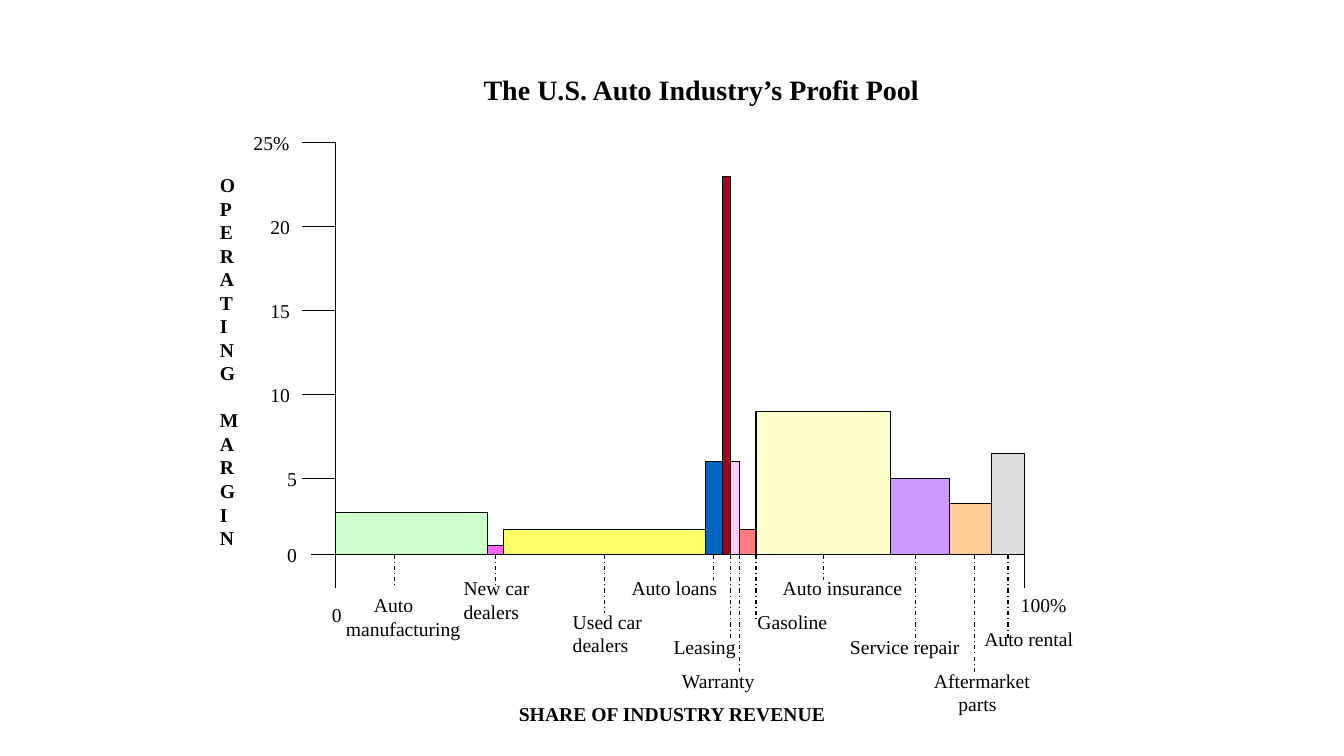
from lxml.etree import SubElement
from pptx import Presentation
from pptx.dml.color import RGBColor
from pptx.enum.dml import MSO_LINE
from pptx.enum.shapes import MSO_CONNECTOR, MSO_SHAPE
from pptx.enum.text import PP_ALIGN
from pptx.oxml.ns import qn
from pptx.util import Pt

TITLE = "The U.S. Auto Industry’s Profit Pool"
SHARE_TITLE = "SHARE OF INDUSTRY REVENUE"
MARGIN_WORDS = ["OPERATING", "MARGIN"]

# Operating margin in percent, label, label left, label width
TICKS = [
    (5, "5", 198, 22),
    (10, "10", 186, 29),
    (15, "15", 186, 29),
    (20, "20", 186, 29),
    (25, "25%", 174, 41),
]

# Revenue share in grid units, operating margin in percent, fill
SEGMENTS = [
    (18, 3, "CCFFCC"),
    (2, 1, "FF66FF"),
    (24, 2, "FFFF66"),
    (2, 6, "0563C1"),
    (1, 23, "A50021"),
    (1, 6, "FFCCFF"),
    (2, 2, "FF7C80"),
    (16, 9, "FFFFCC"),
    (7, 5, "CC99FF"),
    (5, 3.5, "FFCC99"),
    (4, 6.5, "DDDDDD"),
]

# Lines, their indents, label left, top, width, wrap, leader x, leader bottom
LABELS = [
    (["Auto", "manufacturing"], [20, 0], 240, 420, 102, True, 282, 420),
    (["New car", "dealers"], [0, 0], 324, 408, 62, False, 354, 420),
    (["Used car", "dealers"], [0, 0], 402, 432, 65, False, 432, 438),
    (["Auto loans"], [0], 444, 408, 76, False, 510, 414),
    (["Leasing"], [0], 474, 450, 60, False, 522, 456),
    (["Warranty"], [0], 480, 474, 68, False, 528, 480),
    (["Gasoline"], [0], 534, 432, 66, False, 540, 444),
    (["Auto insurance"], [0], 552, 408, 101, False, 588, 414),
    (["Service repair"], [0], 600, 450, 96, True, 654, 462),
    (["Aftermarket", "parts"], [0, 17.5], 660, 474, 84, False, 696, 480),
    (["Auto rental"], [0], 696, 444, 79, False, 720, 456),
]

FONT = "Times New Roman"
INK = "000000"
GRID = 6
AXIS_X, BASE_Y, AXIS_END_Y = 240, 396, 420
ZERO_Y, POINTS_PER_PERCENT = 402, 12
LABEL_RISE = 12
AXIS_RIGHT = AXIS_X + GRID * sum(share for share, _, _ in SEGMENTS)


def color(hex_code):
    return RGBColor.from_string(hex_code)


def margin_y(percent):
    return ZERO_Y - POINTS_PER_PERCENT * percent


def add_line(x1, y1, x2, y2, dash=None):
    line = slide.shapes.add_connector(
        MSO_CONNECTOR.STRAIGHT, Pt(x1), Pt(y1), Pt(x2), Pt(y2))
    line.line.color.rgb = color(INK)
    line.line.width = Pt(0.75)
    if dash:
        line.line.dash_style = dash
    SubElement(line._element.spPr, qn("a:effectLst"))


def add_text(lines, left, top, width, size=14, bold=False, wrap=False,
             align=PP_ALIGN.LEFT, indents=None, gaps=None):
    """Add one text box; gaps maps a line index to its space before."""
    leading = size * 1.2
    height = leading * len(lines) + sum((gaps or {}).values()) + 7.2
    box = slide.shapes.add_textbox(Pt(left), Pt(top), Pt(width), Pt(height))
    frame = box.text_frame
    frame.word_wrap = wrap
    for index, line in enumerate(lines):
        paragraph = frame.add_paragraph() if index else frame.paragraphs[0]
        paragraph.alignment = align
        paragraph.line_spacing = Pt(leading)
        if gaps and index in gaps:
            paragraph.space_before = Pt(gaps[index])
        if indents and indents[index]:
            paragraph._p.get_or_add_pPr().set("marL", str(Pt(indents[index])))
        run = paragraph.add_run()
        run.text = line
        run.font.name = FONT
        run.font.size = Pt(size)
        run.font.bold = bold
        run.font.color.rgb = color(INK)


prs = Presentation()
prs.slide_width, prs.slide_height = Pt(960), Pt(540)
slide = prs.slides.add_slide(prs.slide_layouts[6])

# Title
add_text([TITLE], 276, 48, 450, size=20, bold=True, wrap=True,
         align=PP_ALIGN.CENTER)

# Axes and their end labels
add_line(AXIS_X, margin_y(25), AXIS_X, AXIS_END_Y)
add_line(222, BASE_Y, AXIS_RIGHT, BASE_Y)
add_line(AXIS_RIGHT, BASE_Y, AXIS_RIGHT, AXIS_END_Y)
add_text(["0"], 198, BASE_Y - LABEL_RISE, 22)
add_text(["0"], 230, 427, 22)
add_text(["100%"], 722, 420, 48)

# Margin scale
for percent, label, left, width in TICKS:
    y = margin_y(percent)
    add_line(216, y, AXIS_X, y)
    add_text([label], left, y - LABEL_RISE, width)

# Segment bars, side by side
bar_left = AXIS_X
for share, percent, fill in SEGMENTS:
    top, width = margin_y(percent), share * GRID
    bar = slide.shapes.add_shape(
        MSO_SHAPE.RECTANGLE, Pt(bar_left), Pt(top), Pt(width), Pt(BASE_Y - top))
    bar.shadow.inherit = False
    bar.fill.solid()
    bar.fill.fore_color.rgb = color(fill)
    bar.line.color.rgb = color(INK)
    bar.line.width = Pt(0.75)
    bar_left += width

# Segment leaders and labels
for lines, indents, left, top, width, wrap, leader_x, leader_bottom in LABELS:
    add_line(leader_x, BASE_Y, leader_x, leader_bottom, MSO_LINE.DASH_DOT)
    add_text(lines, left, top, width, wrap=wrap, indents=indents)

# Axis titles
add_text([SHARE_TITLE], 348, 498, 264, bold=True, wrap=True,
         align=PP_ALIGN.CENTER)
add_text(list("".join(MARGIN_WORDS)), 150, 120, 28, bold=True,
         gaps={len(MARGIN_WORDS[0]): 16.8})

prs.save("out.pptx")
